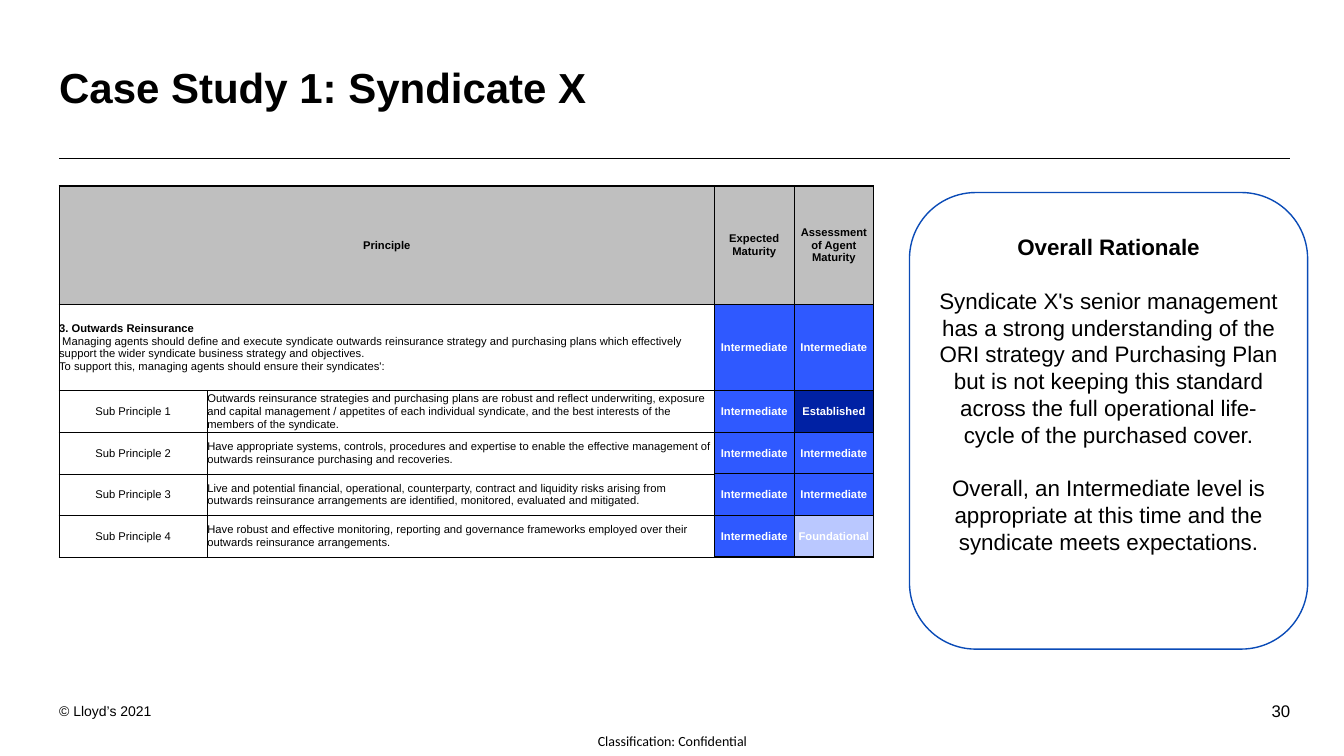
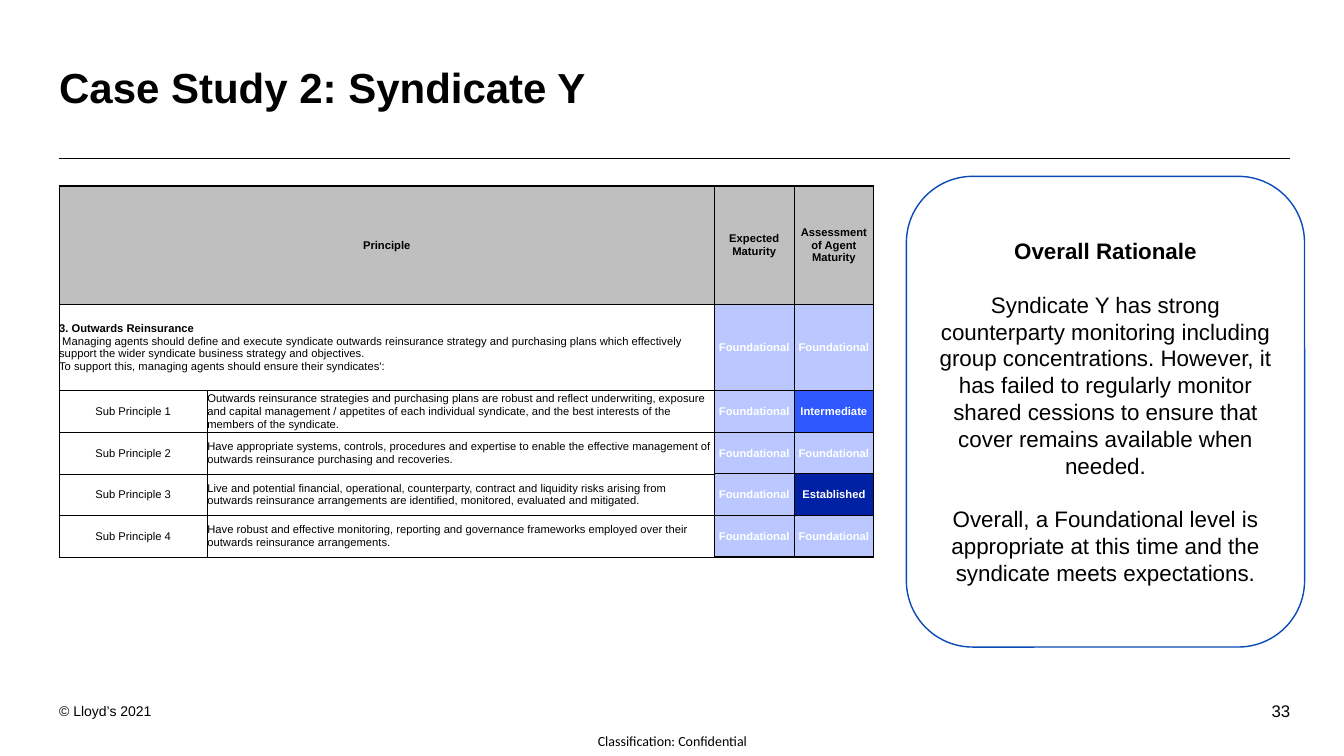
from lxml import etree
from pptx import Presentation
from pptx.dml.color import RGBColor
from pptx.enum import shapes, text
from pptx.oxml.ns import qn
from pptx import util as u

COLORS = {
    "ink": "000000", "paper": "FFFFFF", "header": "BFBFBF", "outline": "0A4BB7",
    "Foundational": "BAC8FF", "Intermediate": "2F59FF", "Established": "0021A4",
}
ALIGN = text.PP_ALIGN
MIDDLE = text.MSO_ANCHOR.MIDDLE

# Shares of the slide's size, in percent
LEFT, CONTENT_W = 4.4, 91.55
TABLE_TOP = 24.6
COLS = [11.03, 37.73, 5.93, 5.93]
ROWS = [15.7, 11.4] + [5.5] * 4

# Border widths in points: left, right, top, bottom
EDGES = {
    "corner": (1, 0.5, 1, 1), "header": (0.5, 0.5, 1, 1), "principle": (1, 1, 1, 0.5),
    "label": (1, 0.5, 0.5, 0.5), "description": (0.5, 1, 0.5, 0.5), "rating": (1, 1, 1, 1),
}

PRINCIPLE = [
    ("3. Outwards Reinsurance", True),
    (" Managing agents should define and execute syndicate outwards reinsurance strategy and "
     "purchasing plans which effectively support the wider syndicate business strategy and "
     "objectives.", False),
    ("To support this, managing agents should ensure their syndicates':", False),
]
SUB_PRINCIPLES = [
    "Outwards reinsurance strategies and purchasing plans are robust and reflect underwriting, "
    "exposure and capital management / appetites of each individual syndicate, and the best "
    "interests of the members of the syndicate.",
    "Have appropriate systems, controls, procedures and expertise to enable the effective "
    "management of outwards reinsurance purchasing and recoveries.",
    "Live and potential financial, operational, counterparty, contract and liquidity risks "
    "arising from outwards reinsurance arrangements are identified, monitored, evaluated and "
    "mitigated.",
    "Have robust and effective monitoring, reporting and governance frameworks employed over "
    "their outwards reinsurance arrangements.",
]

CASES = [
    {
        "title": "Case Study 1: Syndicate X", "number": "30",
        "expected": "Intermediate",
        "assessed": ["Intermediate", "Established", "Intermediate", "Intermediate",
                     "Foundational"],
        "box": (67.67, 25.47, 29.63, 60.4), "bottom": 7.7,
        "rationale": [
            "Syndicate X's senior management has a strong understanding of the ORI strategy and "
            "Purchasing Plan but is not keeping this standard across the full operational "
            "life-cycle of the purchased cover.",
            "Overall, an Intermediate level is appropriate at this time and the syndicate meets "
            "expectations.",
        ],
    },
    {
        "title": "Case Study 2: Syndicate Y", "number": "33",
        "expected": "Foundational",
        "assessed": ["Foundational", "Intermediate", "Foundational", "Established",
                     "Foundational"],
        "box": (67.44, 23.33, 29.63, 62.27), "bottom": 0.67,
        "rationale": [
            "Syndicate Y has strong counterparty monitoring including group concentrations. "
            "However, it has failed to regularly monitor shared cessions to ensure that cover "
            "remains available when needed.",
            "Overall, a Foundational level is appropriate at this time and "
            "the syndicate meets expectations.",
        ],
    },
]


def rgb(name):
    return RGBColor.from_string(COLORS[name])


def set_all(obj, values):
    for name, value in values.items():
        setattr(obj, name, value)


class Deck:
    def __init__(self):
        self.prs = Presentation()
        self.prs.slide_width, self.prs.slide_height = u.Inches(13.33), u.Inches(7.5)
        self.slide = None

    def x(self, share):
        return round(self.prs.slide_width * share / 100)

    def y(self, share):
        return round(self.prs.slide_height * share / 100)

    def area(self, left, top, width, height):
        return self.x(left), self.y(top), self.x(width), self.y(height)

    def add_lines(self, tf, lines, size, align=ALIGN.LEFT, color="ink", font="Arial", gap=0,
                  **para):
        """Fill a text frame with (text, bold) paragraphs, gap points apart."""
        for i, (line, bold) in enumerate(lines):
            p = tf.add_paragraph() if i else tf.paragraphs[0]
            set_all(p, {"alignment": align, "space_before": u.Pt(gap if i else 0), **para})
            r = p.add_run()
            r.text = line
            set_all(r.font, {"name": font, "size": u.Pt(size), "bold": bold})
            r.font.color.rgb = rgb(color)

    def frame(self, tf, x=0, top=0, bottom=0, anchor=MIDDLE):
        set_all(tf, {"word_wrap": True, "vertical_anchor": anchor,
                     "margin_left": self.x(x), "margin_right": self.x(x),
                     "margin_top": self.y(top), "margin_bottom": self.y(bottom)})

    def title(self, words):
        sp = self.slide.shapes.title
        sp.left, sp.top, sp.width, sp.height = self.area(LEFT, 7.87, CONTENT_W, 8.13)
        self.frame(sp.text_frame, top=1.07, bottom=1.07)
        sp.text_frame.auto_size = text.MSO_AUTO_SIZE.NONE
        self.add_lines(sp.text_frame, [(words, True)], 30, line_spacing=0.9)

    def label(self, area, words, size, **style):
        tf = self.slide.shapes.add_textbox(*self.area(*area)).text_frame
        self.frame(tf)
        self.add_lines(tf, [(words, False)], size, **style)

    def rule(self, top):
        y = self.y(top)
        line = self.slide.shapes.add_connector(
            shapes.MSO_CONNECTOR.STRAIGHT, self.x(LEFT), y, self.x(LEFT + CONTENT_W), y)
        line.line.color.rgb = rgb("ink")
        line.line.width = u.Pt(0.5)
        etree.SubElement(line._element.spPr, qn("a:effectLst"))

    def new_slide(self, title, number):
        """Start a slide with its title, rule and footer."""
        self.slide = self.prs.slides.add_slide(self.prs.slide_layouts[5])
        self.title(title)
        self.rule(20.93)
        self.label((93.6, 92.13, 2.4, 3.73), number, 12, align=ALIGN.RIGHT)
        self.label((LEFT, 92.93, 12.2, 2.27), "© Lloyd’s 2021", 10)
        self.label((43.2, 96.13, 13.65, 3.87), "Classification: Confidential", 10,
                   align=ALIGN.CENTER, font="Calibri")

    def cell(self, cell, lines, kind, fill="paper", **style):
        set_all(cell, {"margin_left": 0, "margin_right": 0, "margin_top": 0,
                       "margin_bottom": 0, "vertical_anchor": MIDDLE})
        tc_pr = cell._tc.get_or_add_tcPr()
        for side, width in zip("LRTB", EDGES[kind]):
            ln = etree.SubElement(tc_pr, qn(f"a:ln{side}"), w=str(u.Pt(width)))
            solid = etree.SubElement(ln, qn("a:solidFill"))
            etree.SubElement(solid, qn("a:srgbClr"), val=COLORS["ink"])
        cell.fill.solid()
        cell.fill.fore_color.rgb = rgb(fill)
        self.add_lines(cell.text_frame, lines, 8, **style)

    def maturity_table(self, expected, assessed):
        area = self.area(LEFT, TABLE_TOP, sum(COLS), sum(ROWS))
        table = self.slide.shapes.add_table(len(ROWS), len(COLS), *area).table
        set_all(table, {"first_row": False, "horz_banding": False})
        for column, width in zip(table.columns, COLS):
            column.width = self.x(width)
        for row, height in zip(table.rows, ROWS):
            row.height = self.y(height)

        heads = {0: "Principle", 2: "Expected Maturity", 3: "Assessment of Agent Maturity"}
        for col, head in heads.items():
            self.cell(table.cell(0, col), [(head, True)], "header" if col else "corner",
                      "header", align=ALIGN.CENTER)
        self.cell(table.cell(0, 1), [], "header", "header")
        self.cell(table.cell(1, 0), PRINCIPLE, "principle")
        self.cell(table.cell(1, 1), [], "principle")
        for row in (0, 1):
            table.cell(row, 0).merge(table.cell(row, 1))

        for i, description in enumerate(SUB_PRINCIPLES, 1):
            self.cell(table.cell(i + 1, 0), [(f"Sub Principle {i}", False)], "label",
                      align=ALIGN.CENTER)
            self.cell(table.cell(i + 1, 1), [(description, False)], "description")
        for row, level in enumerate(assessed, 1):
            for col, rating in ((2, expected), (3, level)):
                self.cell(table.cell(row, col), [(rating, True)], "rating", rating,
                          align=ALIGN.CENTER, color="paper")

    def rationale_box(self, area, paragraphs, bottom):
        sp = self.slide.shapes.add_shape(shapes.MSO_SHAPE.ROUNDED_RECTANGLE,
                                         *self.area(*area))
        sp.shadow.inherit = False
        sp.fill.solid()
        sp.fill.fore_color.rgb = rgb("paper")
        sp.line.color.rgb = rgb("outline")
        sp.line.width = u.Pt(1)
        self.frame(sp.text_frame, x=0.75, top=0.67, bottom=bottom)
        lines = [("Overall Rationale", True)] + [(words, False) for words in paragraphs]
        self.add_lines(sp.text_frame, lines, 16, align=ALIGN.CENTER, gap=19)


def main():
    deck = Deck()
    for case in CASES:
        deck.new_slide(case["title"], case["number"])
        deck.maturity_table(case["expected"], case["assessed"])
        deck.rationale_box(case["box"], case["rationale"], case["bottom"])
    deck.prs.save("out.pptx")


if __name__ == "__main__":
    main()
